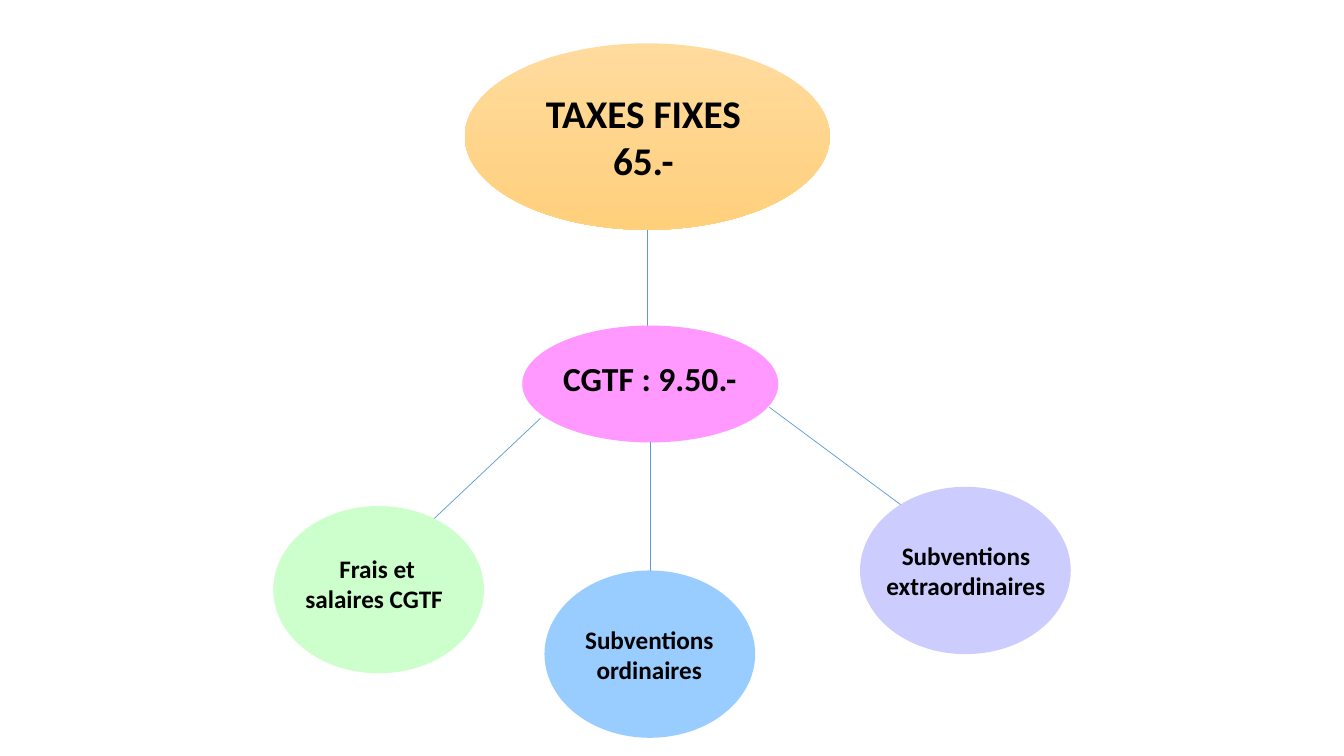
from lxml.etree import SubElement
from pptx import Presentation
from pptx.dml.color import RGBColor
from pptx.enum.shapes import MSO_CONNECTOR, MSO_SHAPE
from pptx.enum.text import MSO_ANCHOR, PP_ALIGN
from pptx.oxml.ns import qn
from pptx.util import Pt

EMU_PER_PX = 9144  # 100 px to the inch
SLIDE_WIDTH, SLIDE_HEIGHT = 1333, 750

BLACK = RGBColor(0x00, 0x00, 0x00)
LINK_BLUE = RGBColor(0x5B, 0x9B, 0xD5)
ORANGE_LIGHT = RGBColor(0xFF, 0xDB, 0x9E)
ORANGE_DEEP = RGBColor(0xFF, 0xD0, 0x7C)
PINK = RGBColor(0xFF, 0x99, 0xFF)
GREEN = RGBColor(0xCC, 0xFF, 0xCC)
BLUE = RGBColor(0x99, 0xCC, 0xFF)
LILAC = RGBColor(0xCC, 0xCC, 0xFF)


def px(*lengths):
    return [length * EMU_PER_PX for length in lengths]


def write(frame, text, size=18, font="Calibri", color=BLACK, bold=True,
          align=PP_ALIGN.CENTER):
    """Fill a text frame, one paragraph for each line of text."""
    frame.text = text
    for paragraph in frame.paragraphs:
        paragraph.alignment = align
        for run in paragraph.runs:
            run.font.size = Pt(size)
            run.font.name = font
            run.font.bold = bold
            run.font.color.rgb = color


class TaxDiagram:
    def __init__(self, slide):
        self.shapes = slide.shapes
        self.link_width = Pt(0.5)

    def bubble(self, box, *colors):
        """Ellipse with a plain fill, or a top-down gradient for two colours."""
        ellipse = self.shapes.add_shape(MSO_SHAPE.OVAL, *px(*box))
        ellipse.shadow.inherit = False
        ellipse.line.fill.background()
        if len(colors) == 1:
            ellipse.fill.solid()
            ellipse.fill.fore_color.rgb = colors[0]
        else:
            ellipse.fill.gradient()
            ellipse.fill.gradient_angle = 270
            for stop, color in zip(ellipse.fill.gradient_stops, colors):
                stop.color.rgb = color

    def label(self, box, text, **style):
        frame = self.shapes.add_textbox(*px(*box)).text_frame
        frame.word_wrap = True
        frame.vertical_anchor = MSO_ANCHOR.TOP
        write(frame, text, **style)

    def link(self, start, end):
        line = self.shapes.add_connector(
            MSO_CONNECTOR.STRAIGHT, *px(*start), *px(*end))
        line.line.color.rgb = LINK_BLUE
        line.line.width = self.link_width
        SubElement(line._element.spPr, qn("a:effectLst"))


def main():
    presentation = Presentation()
    presentation.slide_width, presentation.slide_height = px(
        SLIDE_WIDTH, SLIDE_HEIGHT)
    slide = presentation.slides.add_slide(presentation.slide_layouts[6])
    diagram = TaxDiagram(slide)

    # Fixed taxes
    diagram.bubble((461, 43, 362, 185), ORANGE_LIGHT, ORANGE_DEEP)
    diagram.label((516, 84, 253, 104), "TAXES FIXES \n65.- ", size=28)

    # CGTF share
    diagram.link((642, 228), (642, 323))
    diagram.bubble((518, 323, 254, 116), PINK)
    diagram.label((547, 350, 195, 50), "CGTF : 9.50.- ", size=24)

    # Uses of the CGTF share: link, bubble corner, colour, label
    uses = [
        ((536, 415), (430, 515), (271, 502), GREEN,
         (292, 544, 164, 71), "Frais et salaires CGTF "),
        ((645, 439), (645, 566), (540, 566), BLUE,
         (562, 614, 164, 101), "Subventions ordinaires"),
        ((763, 404), (895, 502), (853, 483), LILAC,
         (867, 531, 182, 71), "Subventions extraordinaires"),
    ]
    for start, end, corner, color, label_box, text in uses:
        diagram.link(start, end)
        diagram.bubble((*corner, 209, 166), color)
        diagram.label(label_box, text)

    presentation.save("out.pptx")


if __name__ == "__main__":
    main()
